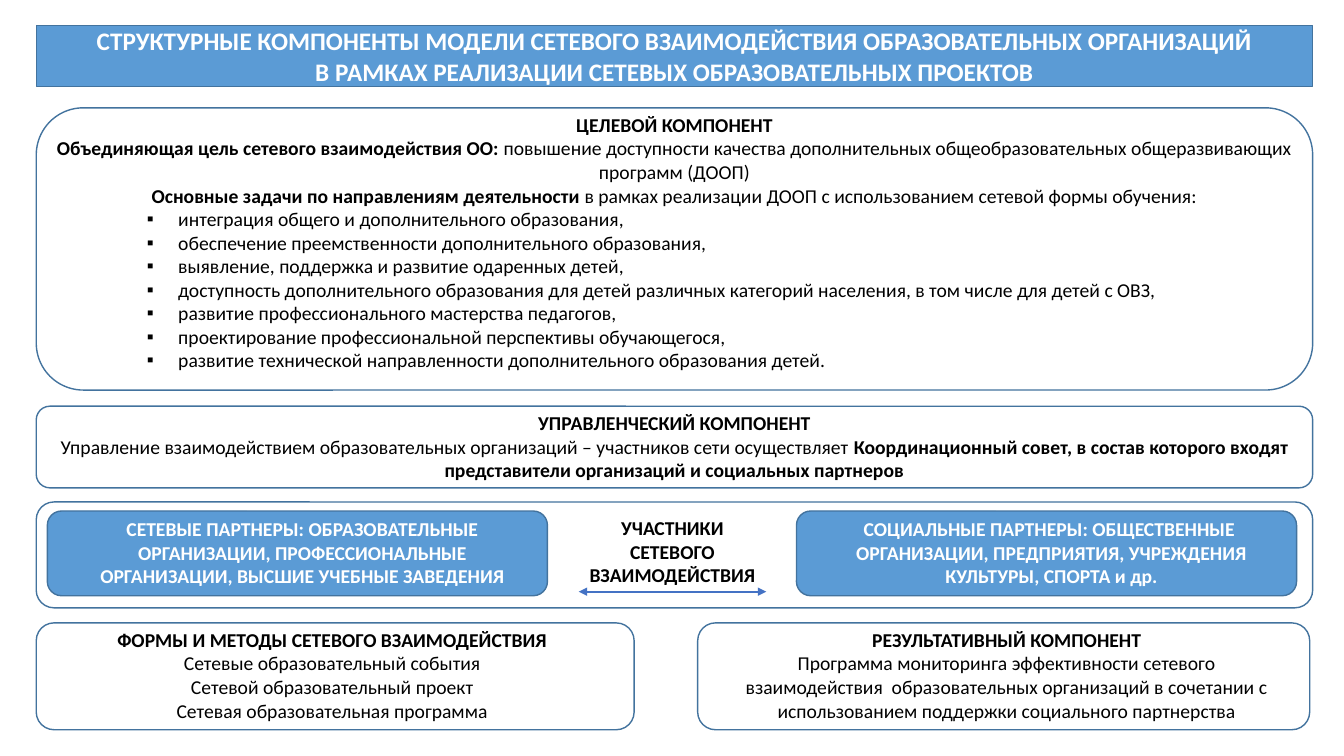
from dataclasses import dataclass
from lxml import etree
from pptx import Presentation
from pptx import util as u
from pptx.dml.color import RGBColor
from pptx.enum import shapes, text
from pptx.oxml import ns


@dataclass
class Theme:
    font: str = "Calibri"
    head: int = 18
    body: int = 14
    ink: str = "000000"
    paper: str = "FFFFFF"
    blue: str = "5B9BD5"
    edge: str = "43739E"
    arrow: str = "4472C4"


class Page:
    """Draws styled elements on one slide; text parts alternate bold and plain."""

    def __init__(self, slide, theme):
        self.slide = slide
        self.theme = theme

    def add(self, node, tag, **attrs):
        return etree.SubElement(node, ns.qn(tag), attrs)

    def paint(self, shape, fill):
        if fill:
            shape.fill.solid()
            shape.fill.fore_color.rgb = RGBColor.from_string(fill)
        else:
            shape.fill.background()
        shape.line.color.rgb = RGBColor.from_string(self.theme.edge)
        shape.line.width = u.Pt(1)

    def place(self, shape, area):
        shape.left, shape.top, shape.width, shape.height = map(u.Inches, area)

    def style(self, para, parts, size, color):
        runs = []
        for i, part in enumerate(parts):
            if part:
                run = para.add_run()
                run.text = part
                runs.append((run, i % 2 == 0))
        font = para.font
        font.name, font.size = self.theme.font, u.Pt(size)
        font.color.rgb = RGBColor.from_string(color)
        if len(runs) == 1:
            font.bold = runs[0][1]
        else:
            for run, bold in runs:
                run.font.bold = bold

    def title(self, area, lines):
        shape = self.slide.shapes.title
        self.place(shape, area)
        geom = self.add(shape.element.spPr, "a:prstGeom", prst="roundRect")
        self.add(geom, "a:avLst")
        self.paint(shape, self.theme.blue)
        frame = shape.text_frame
        frame.auto_size = text.MSO_AUTO_SIZE.NONE
        frame.vertical_anchor = text.MSO_ANCHOR.MIDDLE
        for i, line in enumerate(lines):
            para = frame.add_paragraph() if i else frame.paragraphs[0]
            para.alignment = text.PP_ALIGN.CENTER
            para.line_spacing = 1.0
            para.space_before = u.Pt(0)
            self.style(para, [line], self.theme.head, self.theme.paper)

    def panel(self, area, fill=None):
        shape = self.slide.shapes.add_shape(
            shapes.MSO_SHAPE.ROUNDED_RECTANGLE, *map(u.Inches, area))
        shape.shadow.inherit = False
        self.paint(shape, fill)

    def label(self, area, lines, items=(), color=None, wrap=True):
        box = self.slide.shapes.add_textbox(*map(u.Inches, area))
        frame = box.text_frame
        frame.word_wrap = wrap
        rows = [(line, False) for line in lines]
        rows += [(("", item), True) for item in items]
        for i, (parts, mark) in enumerate(rows):
            para = frame.add_paragraph() if i else frame.paragraphs[0]
            if mark:
                self.bullet(para)
            else:
                para.alignment = text.PP_ALIGN.CENTER
            self.style(para, parts, self.theme.body, color or self.theme.ink)

    def bullet(self, para):
        para.level = 2
        props = para._p.get_or_add_pPr()
        props.set("marL", str(u.Inches(1.31)))
        props.set("indent", str(u.Inches(-0.31)))
        self.add(props, "a:buFont", typeface="Arial")
        self.add(props, "a:buChar", char="▪")

    def arrow(self, left, right, top):
        line = self.slide.shapes.add_connector(
            shapes.MSO_CONNECTOR.STRAIGHT,
            *map(u.Inches, (left, top, right, top)))
        line.line.color.rgb = RGBColor.from_string(self.theme.arrow)
        line.line.width = u.Pt(1.5)
        stroke = line.line._get_or_add_ln()
        for end in ("a:headEnd", "a:tailEnd"):
            self.add(stroke, end, type="triangle")
        self.add(line.element.spPr, "a:effectLst")


def main():
    deck = Presentation()
    deck.slide_width, deck.slide_height = u.Inches(13.33), u.Inches(7.5)
    theme = Theme()
    page = Page(deck.slides.add_slide(deck.slide_layouts[5]), theme)
    left, wide = 0.36, 12.66

    page.title((left, 0.25, wide, 0.61), [
        "СТРУКТУРНЫЕ КОМПОНЕНТЫ МОДЕЛИ СЕТЕВОГО ВЗАИМОДЕЙСТВИЯ ОБРАЗОВАТЕЛЬНЫХ ОРГАНИЗАЦИЙ",
        "В РАМКАХ РЕАЛИЗАЦИИ СЕТЕВЫХ ОБРАЗОВАТЕЛЬНЫХ ПРОЕКТОВ"])

    for top, high in ((1.07, 2.8), (4.03, 0.81), (4.98, 1.05)):
        page.panel((left, top, wide, high))

    page.label((left, 1.07, wide, 2.69), [
        ("ЦЕЛЕВОЙ КОМПОНЕНТ",),
        ("Объединяющая цель сетевого взаимодействия ОО: ",
         "повышение доступности качества дополнительных общеобразовательных "
         "общеразвивающих программ (ДООП)"),
        ("Основные задачи по направлениям деятельности",
         " в рамках реализации ДООП с использованием сетевой формы обучения:"),
    ], [
        "интеграция общего и дополнительного образования,",
        "обеспечение преемственности дополнительного образования,",
        "выявление, поддержка и развитие одаренных детей,",
        "доступность дополнительного образования для детей различных "
        "категорий населения, в том числе для детей с ОВЗ,",
        "развитие профессионального мастерства педагогов,",
        "проектирование профессиональной перспективы обучающегося,",
        "развитие технической направленности дополнительного образования детей.",
    ])

    page.label((left, 4.03, wide, 0.81), [
        ("УПРАВЛЕНЧЕСКИЙ КОМПОНЕНТ",),
        ("", "Управление взаимодействием образовательных организаций – "
         "участников сети осуществляет ",
         "Координационный совет, в состав которого входят "
         "представители организаций и социальных партнеров")])

    page.label((5.74, 5.07, 1.86, 0.81), [
        ("УЧАСТНИКИ",), ("СЕТЕВОГО",), ("ВЗАИМОДЕЙСТВИЯ",)], wrap=False)
    page.arrow(5.74, 7.6, 5.87)

    partners = (
        (0.47, "СЕТЕВЫЕ ПАРТНЕРЫ: ОБРАЗОВАТЕЛЬНЫЕ ОРГАНИЗАЦИИ, "
         "ПРОФЕССИОНАЛЬНЫЕ ОРГАНИЗАЦИИ, ВЫСШИЕ УЧЕБНЫЕ ЗАВЕДЕНИЯ"),
        (7.9, "СОЦИАЛЬНЫЕ ПАРТНЕРЫ: ОБЩЕСТВЕННЫЕ  ОРГАНИЗАЦИИ, "
         "ПРЕДПРИЯТИЯ, УЧРЕЖДЕНИЯ КУЛЬТУРЫ, СПОРТА и др."))
    for x, words in partners:
        page.panel((x, 5.07, 4.96, 0.84), theme.blue)
        page.label((x + 0.28, 5.08, 4.5, 0.81), [(words,)], color=theme.paper)

    results = (
        (left, 5.93, 0.59, 5.41, "ФОРМЫ И МЕТОДЫ СЕТЕВОГО ВЗАИМОДЕЙСТВИЯ",
         ["Сетевые образовательный события",
          "Сетевой образовательный проект",
          "Сетевая образовательная программа"]),
        (6.92, 6.07, 7.22, 5.53, "РЕЗУЛЬТАТИВНЫЙ КОМПОНЕНТ",
         ["Программа мониторинга эффективности сетевого взаимодействия  "
          "образовательных организаций в сочетании с использованием "
          "поддержки социального партнерства"]))
    for x, width, inner, span, head, lines in results:
        page.panel((x, 6.18, width, 1.06), theme.paper)
        page.label((inner, 6.18, span, 1.04),
                   [(head,)] + [("", line) for line in lines])

    deck.save("out.pptx")


if __name__ == "__main__":
    main()
